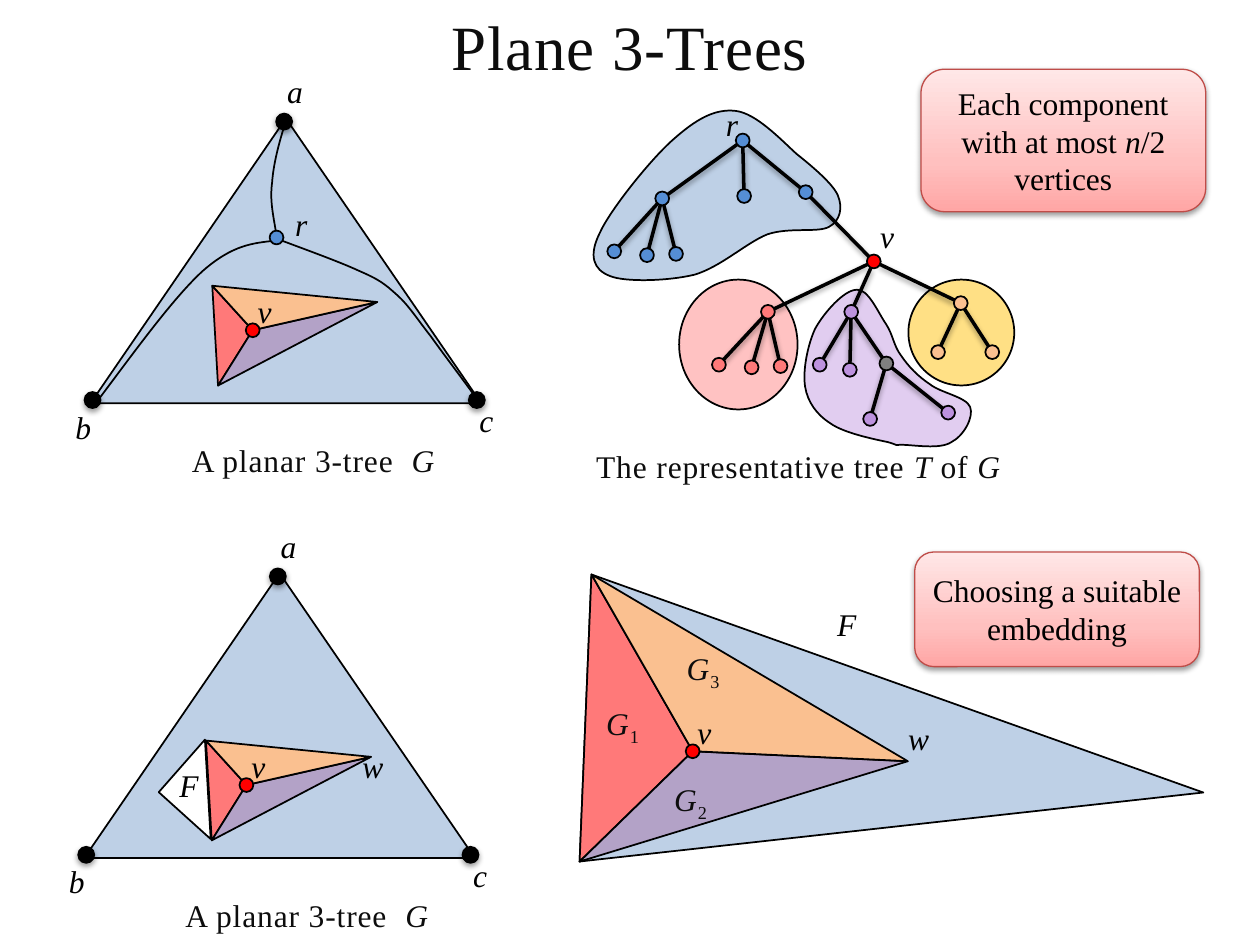
from copy import deepcopy
from math import hypot

from lxml import etree
from pptx import Presentation
from pptx.dml.color import RGBColor
from pptx.enum.shapes import MSO_CONNECTOR, MSO_SHAPE
from pptx.enum.text import MSO_ANCHOR, MSO_AUTO_SIZE, PP_ALIGN
from pptx.oxml.ns import qn
from pptx.util import Pt

FONT = "Times New Roman"
BLACK, INK = RGBColor(0, 0, 0), RGBColor(0x0D, 0x0D, 0x0D)
WHITE, RED = RGBColor(255, 255, 255), RGBColor(255, 0, 0)
BLUE, SKY = RGBColor(0x4F, 0x81, 0xBD), RGBColor(0x55, 0x8E, 0xD5)
GOLD, ORANGE = RGBColor(0xFF, 0xC0, 0), RGBColor(0xFA, 0xC0, 0x90)
VIOLET, MAUVE = RGBColor(0xBD, 0x92, 0xDE), RGBColor(0xB3, 0xA2, 0xC7)
CORAL, GREY = RGBColor(0xFF, 0x79, 0x79), RGBColor(0x80, 0x80, 0x80)
CARD_EDGE = RGBColor(0xBF, 0x4C, 0x48)
CARD_STOPS = [(0, RGBColor(0xFF, 0xA6, 0xA5)), (0.35, RGBColor(0xFF, 0xC0, 0xBF)),
              (1, RGBColor(0xFF, 0xE7, 0xE7))]
NODE, CORNER = 7.9, 9.4  # dot diameters

# Representative tree: node -> (x, y, colour, parent)
TREE = {
    "r": (424.4, 80.3, SKY, None),
    "r1": (378.4, 113.4, SKY, "r"), "r2": (425.2, 112, SKY, "r"), "r3": (460.4, 109.8, SKY, "r"),
    "r11": (351, 143.6, SKY, "r1"), "r12": (369.7, 145.8, SKY, "r1"), "r13": (386.3, 145.1, SKY, "r1"),
    "v": (499.3, 149.4, RED, "r3"),
    "v1": (438.8, 178.2, CORAL, "v"), "v2": (486.4, 178.2, VIOLET, "v"), "v3": (549, 173.2, ORANGE, "v"),
    "v11": (410.8, 208.4, CORAL, "v1"), "v12": (429.5, 209.9, CORAL, "v1"), "v13": (446, 209.2, CORAL, "v1"),
    "v21": (468.4, 208.4, VIOLET, "v2"), "v22": (485.6, 211.3, VIOLET, "v2"), "v23": (506.5, 207.7, GREY, "v2"),
    "v231": (497.2, 239.4, VIOLET, "v23"), "v232": (541.8, 235.8, VIOLET, "v23"),
    "v31": (536, 201.2, ORANGE, "v3"), "v32": (567, 201.2, ORANGE, "v3"),
}
# Components: Bezier outlines (start, then three points a segment) and ellipses
BLUE_COMPONENT = [
    (473.8, 129.6), (480.2, 126), (481.7, 118.8), (478.8, 111.6), (475.9, 105.1), (465.1, 95.8),
    (455, 87.8), (445.7, 79.2), (432, 64.8), (420.5, 63.4), (408.2, 61.9), (397.4, 68.4),
    (384.5, 79.9), (371.5, 91.4), (348.5, 120.2), (342.7, 133.2), (336.2, 146.2), (339.1, 154.1),
    (348.5, 157.7), (357.1, 161.3), (381.6, 160.6), (396.7, 157), (411.8, 152.6), (426.2, 138.9),
    (438.5, 133.9), (451.4, 129.6), (467.3, 133.2), (473.8, 129.6)]
VIOLET_COMPONENT = [
    (515.5, 254.2), (509.8, 254.2), (514.8, 254.9), (507.6, 252.7), (501.1, 251.3), (482.4, 247.7),
    (474.5, 241.9), (466.6, 236.9), (461.5, 229.7), (460.1, 221), (458.6, 211.7), (461.5, 197.3),
    (465.8, 187.9), (470.9, 178.6), (482.4, 165.6), (489.6, 165.6), (496.1, 164.9), (501.8, 178.6),
    (506.2, 185), (510.5, 191.5), (510.5, 197.3), (514.8, 203), (519.1, 209.5), (524.9, 215.3),
    (531.4, 219.6), (537.8, 224.6), (552.2, 226.8), (554.4, 232.6), (556.6, 238.3), (550.8, 249.1),
    (543.6, 252.7), (537.1, 257), (522, 254.2), (515.5, 254.2)]
ROUND_COMPONENTS = [((388.1, 159.8, 67.7, 74.2), RED, 24), ((519.1, 159.8, 60.5, 60.5), GOLD, 48)]

# Planar 3-tree, drawn at the top and again lower down
GRAPH_OFFSETS = [(0, 0), (-3.6, 259.9)]
OUTER_TRIANGLE = (51.8, 67.7, 223.2, 162.7)
CORNERS = [(162.4, 69.5), (52.9, 228.6), (272.5, 228.6)]
GRAPH_LABELS = [("a", 168.5, 52.2), ("b", 47.5, 243.7), ("c", 277.9, 240.1), ("v", 151.2, 177.8)]
SMALL_FACE = [(121.3, 163.3), (124.6, 220.3), (215.6, 172.6), (144.4, 188.7)]  # top, bottom, right, v
GRAPH_CAPTION = [("A planar 3-tree  ", ""), ("G", "i")]
ROOT = (158, 135.7)
ROOT_EDGES = [
    [(56.9, 227.5), (78.5, 198.7), (99.4, 169.9), (115.9, 154.8), (133.2, 139.7), (144.7, 139), (157, 137.5)],
    [(157.7, 132.5), (156.2, 123.1), (154.1, 114.5), (155.5, 104.4), (156.2, 94.3), (159.1, 82.8), (162.7, 71.3)],
    [(159.1, 136.8), (176.4, 143.3), (194.4, 149.8), (205.2, 154.8), (216.7, 159.8), (219.6, 162),
     (226.8, 168.5), (233.3, 174.2), (238.3, 182.2), (246.2, 192.2), (253.4, 202.3), (262.8, 214.6),
     (272.2, 227.5)]]

# Enlarged embedding
LARGE_FACE = [(338, 328.3), (331.2, 492.3), (518.7, 435), (395.8, 429.3)]
FAR_CORNER = (687.6, 452.9)
WHITE_FACE = (76.3, 437.8, 56.9, 28.1)

LABELS = [("r", 172.1, 128.2), ("r", 418.3, 70.6), ("v", 506.9, 134.6), ("w", 213.1, 437.8),
          ("F", 108, 448.6), ("F", 483.8, 356.4), ("v", 402.5, 418.3), ("w", 524.9, 421.9)]
SUBGRAPHS = [("1", 355.7, 414.7), ("3", 401.8, 383), ("2", 394.6, 457.9)]
TREE_CAPTION = [("The representative tree ", ""), ("T ", "i"), ("of ", ""), ("G ", "i")]
CARDS = [((526.3, 39.6, 162.7, 81.4), [("Each component with at most ", ""), ("n", "i"), ("/2 vertices", "")]),
         ((522.7, 315.4, 162.7, 65.5), [("Choosing a suitable embedding", "")])]

prs = Presentation()
prs.slide_width, prs.slide_height = Pt(720), Pt(540)
slide = prs.slides.add_slide(prs.slide_layouts[5])
shapes = slide.shapes


def paint(shape, colour, alpha=100, edge=BLACK, width=1):
    shape.shadow.inherit = False
    if colour is None:
        shape.fill.background()
    else:
        shape.fill.solid()
        shape.fill.fore_color.rgb = colour
        if alpha < 100:
            tint = shape._element.spPr.find(qn("a:solidFill"))[0]
            etree.SubElement(tint, qn("a:alpha"), val=str(alpha * 1000))
    shape.line.color.rgb = edge
    shape.line.width = Pt(width)
    return shape


def cast_shadow(shape):
    effects = shape._element.spPr.find(qn("a:effectLst"))
    if effects is None:
        effects = etree.SubElement(shape._element.spPr, qn("a:effectLst"))
    outer = etree.SubElement(effects, qn("a:outerShdw"), blurRad="40000", dist="20000",
                             dir="5400000", rotWithShape="0")
    tone = etree.SubElement(outer, qn("a:srgbClr"), val="000000")
    etree.SubElement(tone, qn("a:alpha"), val="38000")


def preset(kind, box, colour, alpha=100, **edge):
    return paint(shapes.add_shape(kind, *map(Pt, box)), colour, alpha, **edge)


def dot(x, y, colour, size=NODE, **edge):
    return preset(MSO_SHAPE.OVAL, (x - size / 2, y - size / 2, size, size), colour, **edge)


def outline(points, colour, alpha=100, closed=True, curved=False):
    start, *rest = [(Pt(x), Pt(y)) for x, y in points]
    builder = shapes.build_freeform(*start)
    builder.add_line_segments(rest, close=closed)
    shape = builder.convert_to_shape()
    if curved:  # every three line segments become one cubic curve
        segments = list(shape._element.iter(qn("a:lnTo")))
        for first in range(0, len(segments), 3):
            trio = segments[first:first + 3]
            curve = etree.Element(qn("a:cubicBezTo"))
            trio[0].addprevious(curve)
            for segment in trio:
                curve.append(segment[0])
                segment.getparent().remove(segment)
    return paint(shape, colour, alpha)


def write(frame, pieces, colour=BLACK, size=18, spacing=0):
    paragraph = frame.paragraphs[0]
    paragraph.alignment = PP_ALIGN.CENTER
    for text, style in pieces:
        run = paragraph.add_run()
        run.text = text
        run.font.name, run.font.size = FONT, Pt(size)
        run.font.color.rgb = colour
        run.font.italic = style == "i"
        if spacing:
            run.font._element.set("spc", str(spacing))
        if style == "sub":
            run.font._element.set("baseline", "-25000")


def label(pieces, x, y, width=27.4, height=18, wrap=True, **style):
    frame = shapes.add_textbox(*map(Pt, (x - width / 2, y - height / 2, width, height))).text_frame
    frame.margin_left = frame.margin_right = frame.margin_top = frame.margin_bottom = 0
    frame.word_wrap = wrap
    frame.vertical_anchor = MSO_ANCHOR.MIDDLE
    write(frame, pieces, **style)


def caption(pieces, x, y, width):
    label(pieces, x, y, width, 28.8, wrap=False, colour=INK, spacing=50)


def split_face(top, bottom, right, centre):
    for corners, colour in [((bottom, top), CORAL), ((right, bottom), MAUVE), ((top, right), ORANGE)]:
        outline([centre, *corners], colour)
    dot(*centre, RED)


# Title
title = shapes.title
title.left, title.top, title.width, title.height = map(Pt, (0, 0.7, 720, 51.1))
title.text_frame.auto_size = MSO_AUTO_SIZE.NONE
title.text_frame.vertical_anchor = MSO_ANCHOR.TOP
write(title.text_frame, [("Plane 3-Trees", "")], INK, 36, 50)

# Representative tree: components, edges cut at the node rims, nodes
for box, colour, alpha in ROUND_COMPONENTS:
    preset(MSO_SHAPE.OVAL, box, colour, alpha)
outline(BLUE_COMPONENT, BLUE, 37, curved=True)
outline(VIOLET_COMPONENT, VIOLET, 45, curved=True)
for x, y, _, parent in TREE.values():
    if parent:
        px, py = TREE[parent][:2]
        rim = NODE / 2 / hypot(x - px, y - py)
        dx, dy = (x - px) * rim, (y - py) * rim
        edge = shapes.add_connector(MSO_CONNECTOR.STRAIGHT, *map(Pt, (px + dx, py + dy, x - dx, y - dy)))
        edge.line.color.rgb, edge.line.width = BLACK, Pt(2)
        cast_shadow(edge)
for x, y, colour, _ in TREE.values():
    dot(x, y, colour)
caption(TREE_CAPTION, 458.6, 266.4, 253.4)

# Planar 3-trees
for dx, dy in GRAPH_OFFSETS:
    left, top, width, height = OUTER_TRIANGLE
    preset(MSO_SHAPE.ISOSCELES_TRIANGLE, (left + dx, top + dy, width, height), BLUE, 37)
    split_face(*[(x + dx, y + dy) for x, y in SMALL_FACE])
    for x, y in CORNERS:
        cast_shadow(dot(x + dx, y + dy, BLACK, CORNER, width=0.75))
    for letter, x, y in GRAPH_LABELS:
        label([(letter, "i")], x + dx, y + dy)
    caption(GRAPH_CAPTION, 178.9 + dx, 262.8 + dy, 154.8)
for curve in ROOT_EDGES:
    outline(curve, None, closed=False, curved=True)
dot(*ROOT, SKY)
preset(MSO_SHAPE.ISOSCELES_TRIANGLE, WHITE_FACE, WHITE).rotation = 266.7

# Enlarged embedding
outline([LARGE_FACE[1], LARGE_FACE[0], FAR_CORNER], BLUE, 37)
split_face(*LARGE_FACE)
for letter, x, y in LABELS:
    label([(letter, "i")], x, y)
for index, x, y in SUBGRAPHS:
    caption([("G", "i"), (index, "sub")], x, y, 34.6)

# Cards
for box, pieces in CARDS:
    card = preset(MSO_SHAPE.ROUNDED_RECTANGLE, box, WHITE, edge=CARD_EDGE, width=0.75)
    card.fill.gradient()
    card.fill.gradient_angle = 90
    stop_list = card._element.spPr.find(".//" + qn("a:gsLst"))
    stop_list.insert(1, deepcopy(stop_list[0]))
    for stop, (position, colour) in zip(card.fill.gradient_stops, CARD_STOPS):
        stop.position, stop.color.rgb = position, colour
    cast_shadow(card)
    card.text_frame.word_wrap = True
    card.text_frame.vertical_anchor = MSO_ANCHOR.MIDDLE
    write(card.text_frame, pieces)

prs.save("out.pptx")
